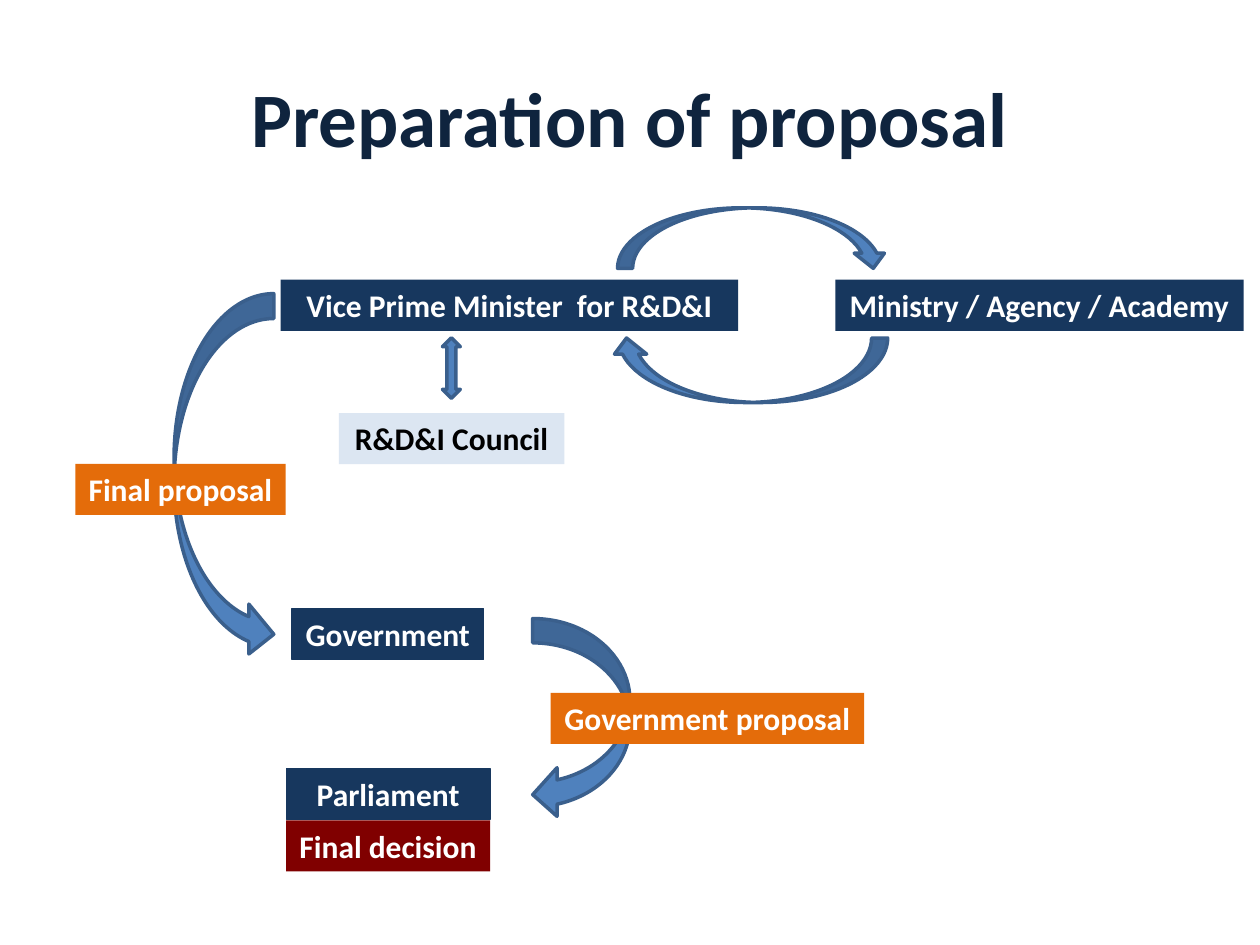
import pptx
import pptx.dml.color
import pptx.enum.shapes
import pptx.enum.text
import pptx.util

Cm, Pt = pptx.util.Cm, pptx.util.Pt
SHAPE = pptx.enum.shapes.MSO_SHAPE
TEXT = pptx.enum.text

FONT = "Calibri"
NAVY, ORANGE, MAROON, PALE = "17375E", "E46C0A", "800000", "DCE6F2"
WHITE, BLACK, TITLE_INK = "FFFFFF", "000000", "0F243E"
ARROW_FILL, ARROW_EDGE = "4F81BD", "3A5F8C"
BOX_HEIGHT = 1.03

# kind, left, top, width, height, rotation
ARROWS = [
    (SHAPE.CURVED_LEFT_ARROW, 10.74, 12.47, 1.96, 4.04, 0),
    (SHAPE.CURVED_RIGHT_ARROW, 3.51, 5.92, 2.01, 7.37, 0),
    (SHAPE.CURVED_DOWN_ARROW, 12.45, 4.19, 5.46, 1.22, 0),
    (SHAPE.CURVED_LEFT_ARROW, 14.45, 4.67, 1.3, 5.59, 90),
    (SHAPE.UP_DOWN_ARROW, 8.92, 6.81, 0.36, 1.22, 0),
]

# text, left, top, width, fill, ink, outlined, wrapped
BOXES = [
    ("Vice Prime Minister  for R&D&I", 5.66, 5.64, 9.22, NAVY, WHITE, False, True),
    ("Ministry / Agency / Academy", 16.84, 5.64, 8.23, NAVY, WHITE, False, False),
    ("R&D&I Council", 6.83, 8.33, 4.55, PALE, BLACK, False, False),
    ("Final proposal", 1.52, 9.35, 4.24, ORANGE, WHITE, False, False),
    ("Government", 5.89, 12.27, 3.86, NAVY, WHITE, True, False),
    ("Government proposal", 11.1, 13.97, 6.32, ORANGE, WHITE, False, False),
    ("Parliament", 5.77, 15.49, 4.11, NAVY, WHITE, True, True),
    ("Final decision", 5.77, 16.54, 4.11, MAROON, WHITE, False, False),
]


def colour(hex_code):
    return pptx.dml.color.RGBColor.from_string(hex_code)


def write(frame, text, size, ink):
    """Put one bold, centred paragraph into a text frame."""
    frame.text = text
    paragraph = frame.paragraphs[0]
    paragraph.alignment = TEXT.PP_ALIGN.CENTER
    font = paragraph.font
    font.name, font.size, font.bold = FONT, Pt(size), True
    font.color.rgb = colour(ink)


def set_title(slide, text):
    title = slide.shapes.title
    title.left, title.top = Cm(1.27), Cm(0.76)
    title.width, title.height = Cm(22.86), Cm(3.18)
    title.text_frame.vertical_anchor = TEXT.MSO_ANCHOR.MIDDLE
    write(title.text_frame, text, 44, TITLE_INK)


def add_filled(slide, kind, left, top, width, height, fill):
    filled = slide.shapes.add_shape(kind, Cm(left), Cm(top), Cm(width), Cm(height))
    filled.shadow.inherit = False
    filled.fill.solid()
    filled.fill.fore_color.rgb = colour(fill)
    return filled


def set_outline(outlined, hex_code, width):
    outlined.line.color.rgb = colour(hex_code)
    outlined.line.width = Pt(width)


def add_arrow(slide, kind, left, top, width, height, rotation):
    arrow = add_filled(slide, kind, left, top, width, height, ARROW_FILL)
    set_outline(arrow, ARROW_EDGE, 2)
    arrow.rotation = rotation


def add_box(slide, text, left, top, width, fill, ink, outlined, wrapped):
    box = add_filled(slide, SHAPE.RECTANGLE, left, top, width, BOX_HEIGHT, fill)
    if outlined:
        set_outline(box, fill, 0.75)
    else:
        box.line.fill.background()
    frame = box.text_frame
    frame.word_wrap = wrapped
    frame.auto_size = TEXT.MSO_AUTO_SIZE.SHAPE_TO_FIT_TEXT
    frame.vertical_anchor = TEXT.MSO_ANCHOR.TOP
    write(frame, text, 18, ink)


def main():
    deck = pptx.Presentation()
    deck.slide_width, deck.slide_height = Cm(25.4), Cm(19.05)
    slide = deck.slides.add_slide(deck.slide_layouts.get_by_name("Title Only"))
    set_title(slide, "Preparation of proposal")
    for arrow in ARROWS:
        add_arrow(slide, *arrow)
    for box in BOXES:
        add_box(slide, *box)
    deck.save("out.pptx")


if __name__ == "__main__":
    main()
